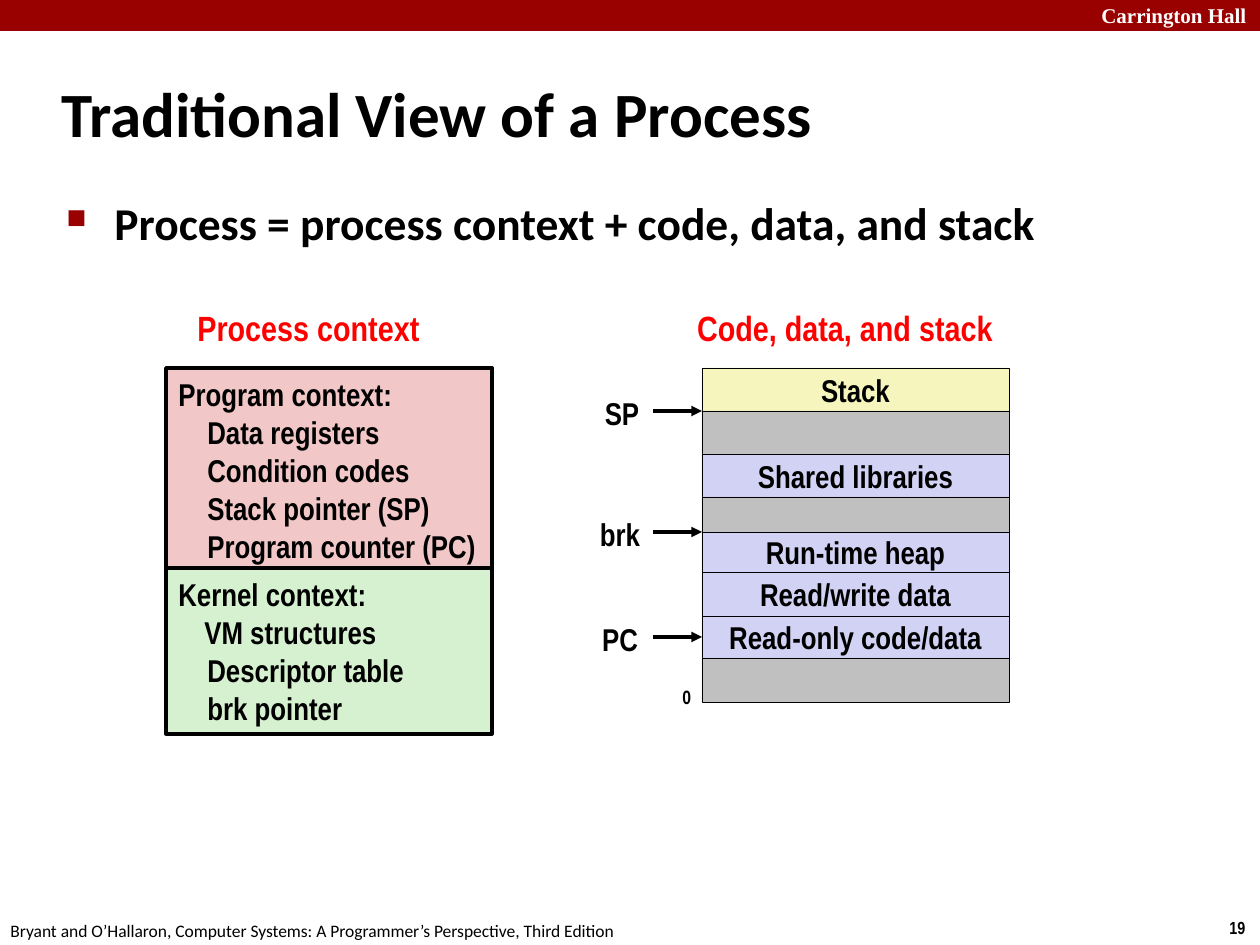
from lxml import etree
from pptx import Presentation
from pptx.dml.color import RGBColor
from pptx.enum.shapes import MSO_CONNECTOR, MSO_SHAPE
from pptx.enum.text import MSO_ANCHOR, PP_ALIGN
from pptx.oxml.ns import qn
from pptx.util import Emu, Pt

RECT = MSO_SHAPE.RECTANGLE
LINE = MSO_CONNECTOR.STRAIGHT
TOP, MIDDLE = MSO_ANCHOR.TOP, MSO_ANCHOR.MIDDLE
LEFT, CENTER = PP_ALIGN.LEFT, PP_ALIGN.CENTER

SCALE = 914400 // 126
NARROW, SANS, SERIF = "Arial Narrow", "Calibri", "Times New Roman"
BLACK, WHITE, RED, MAROON = "000000", "FFFFFF", "FF0000", "990000"
GRAY, LILAC, YELLOW = "C0C0C0", "D2D2F4", "F6F5BD"
PINK, GREEN = "F1C7C7", "D5F1CF"

# Each memory segment: name, fill, top edge; it ends where the next starts.
SEGMENTS = [
    ("Stack", YELLOW, 368),
    ("", GRAY, 411),
    ("Shared libraries", LILAC, 454),
    ("", GRAY, 497),
    ("Run-time heap", LILAC, 532),
    ("Read/write data", LILAC, 572),
    ("Read-only code/data", LILAC, 616),
    ("", GRAY, 658),
]
MEM_LEFT, MEM_WIDTH, MEM_END = 702, 307, 702

# Each pointer: name, centre of its label, height of its arrow.
POINTERS = [("SP", 622, 411), ("brk", 620, 532), ("PC", 620, 637)]

PROGRAM = [("Program context:", 0), ("Data registers", 29),
           ("Condition codes", 29), ("Stack pointer (SP)", 29),
           ("Program counter (PC)", 29)]
KERNEL = [("Kernel context:", 0), ("VM structures", 26),
          ("Descriptor table", 29), ("brk pointer", 29)]


def px(*nums):
    return [Emu(num * SCALE) for num in nums]


def color(code):
    return RGBColor.from_string(code)


def style(para, size, font=NARROW, ink=BLACK, bold=True, align=LEFT):
    para.alignment = align
    para.font.size = Pt(size)
    para.font.name = font
    para.font.bold = bold
    para.font.color.rgb = color(ink)


def indent(para, left, first=0):
    props = para._p.get_or_add_pPr()
    props.set("marL", str(left * SCALE))
    props.set("indent", str(first * SCALE))
    return props


def add_text(slide, box, text, size, wrap=False, anchor=TOP, **looks):
    frame = slide.shapes.add_textbox(*px(*box)).text_frame
    frame.word_wrap = wrap
    frame.vertical_anchor = anchor
    para = frame.paragraphs[0]
    para.text = text
    style(para, size, **looks)
    return para


def add_box(slide, box, fill, width=0):
    """Add a filled rectangle, with a black outline if width is given."""
    shape = slide.shapes.add_shape(RECT, *px(*box))
    shape.shadow.inherit = False
    shape.fill.solid()
    shape.fill.fore_color.rgb = color(fill)
    if width:
        shape.line.color.rgb = color(BLACK)
        shape.line.width = Pt(width)
    else:
        shape.line.fill.background()
    return shape


def add_bullet(para):
    props = indent(para, 48, -48)
    tint = etree.SubElement(props, qn("a:buClr"))
    etree.SubElement(tint, qn("a:srgbClr"), val=MAROON)
    etree.SubElement(props, qn("a:buSzPct"), val="60000")
    etree.SubElement(props, qn("a:buChar"), char="■")


def add_panel(slide, box, fill, lines):
    frame = add_box(slide, box, fill, 2).text_frame
    frame.word_wrap = True
    frame.margin_right = 0
    frame.vertical_anchor = MIDDLE
    for num, (text, left) in enumerate(lines):
        para = frame.add_paragraph() if num else frame.paragraphs[0]
        para.text = text
        style(para, 18)
        indent(para, left)


def add_memory(slide):
    """Stack the segments and return their shapes by name."""
    shapes = {}
    ends = [top for _, _, top in SEGMENTS[1:]] + [MEM_END]
    for (name, fill, top), end in zip(SEGMENTS, ends):
        shape = add_box(slide, (MEM_LEFT, top, MEM_WIDTH, end - top), fill, 0.25)
        if name:
            frame = shape.text_frame
            frame.word_wrap = False
            frame.vertical_anchor = MIDDLE
            frame.paragraphs[0].text = name
            style(frame.paragraphs[0], 18, align=CENTER)
            shapes[name] = shape
    return shapes


def add_arrow(slide, y):
    arrow = slide.shapes.add_connector(LINE, *px(653, y, MEM_LEFT, y))
    arrow.line.color.rgb = color(BLACK)
    arrow.line.width = Pt(2)
    etree.SubElement(arrow.line._get_or_add_ln(), qn("a:tailEnd"), type="triangle")
    etree.SubElement(arrow._element.spPr, qn("a:effectLst"))
    return arrow


def add_frame(slide):
    """Add the top band, footer and page number."""
    add_box(slide, (0, 0, 1260, 31), MAROON)
    add_text(slide, (1089, -4, 180, 38), "Carrington Hall", 12,
             font=SERIF, ink=WHITE)
    add_text(slide, (1217, 911, 43, 34), "19", 10)
    add_text(slide, (-2, 914, 640, 34),
             "Bryant and O’Hallaron, Computer Systems: "
             "A Programmer’s Perspective, Third Edition",
             10, font=SANS, bold=False)


def main():
    deck = Presentation()
    deck.slide_width, deck.slide_height = px(1260, 945)
    slide = deck.slides.add_slide(deck.slide_layouts[6])

    add_frame(slide)
    add_text(slide, (49, 60, 1046, 105), "Traditional View of a Process", 36,
             wrap=True, anchor=MIDDLE, font=SANS)
    point = add_text(slide, (54, 189, 1089, 685),
                     "Process = process context + code, data, and stack", 26,
                     wrap=True, font=SANS)
    point.space_before = Pt(5)
    add_bullet(point)

    for text, left, width in [("Process context", 184, 249),
                              ("Code, data, and stack", 683, 324)]:
        add_text(slide, (left, 300, width, 55), text, 20,
                 anchor=MIDDLE, ink=RED, align=CENTER)

    add_panel(slide, (166, 368, 326, 204), PINK, PROGRAM)
    add_panel(slide, (166, 568, 326, 166), GREEN, KERNEL)

    memory = add_memory(slide)
    arrows = {}
    for name, mid, y in POINTERS:
        add_text(slide, (mid - 40, y - 23, 80, 50), name, 18,
                 anchor=MIDDLE, align=CENTER)
        arrows[name] = add_arrow(slide, y)
    arrows["PC"].end_connect(memory["Read-only code/data"], 1)
    add_text(slide, (670, 679, 34, 37), "0", 11)

    deck.save("out.pptx")


if __name__ == "__main__":
    main()
